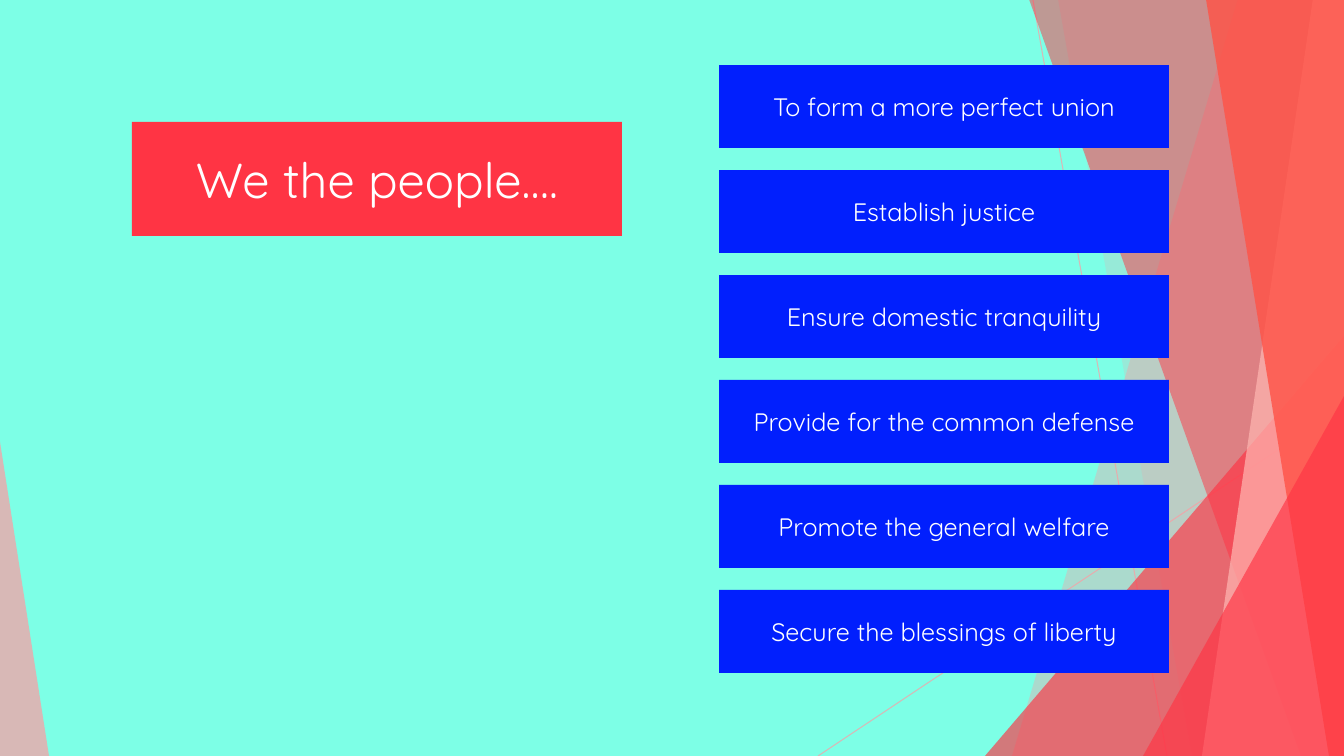
from dataclasses import dataclass

from pptx import Presentation
from pptx.dml.color import RGBColor
from pptx.enum.shapes import MSO_CONNECTOR, MSO_SHAPE
from pptx.enum.text import MSO_ANCHOR, PP_ALIGN
from pptx.oxml.ns import qn
from pptx.util import Pt
from lxml.etree import SubElement

W, H = 1344, 756
PX = 12192000 / W


@dataclass(frozen=True)
class Theme:
    mint: str = "7DFFE6"
    pink: str = "FF9AA2"
    peach: str = "FFB7B2"
    coral: str = "FF5246"
    red: str = "FF3444"
    blue: str = "011FFD"
    white: str = "FFFFFF"
    font: str = "Quicksand"
    title_size: int = 35
    goal_size: int = 18
    hairline: float = 0.75


theme = Theme()


def px(*lengths):
    return [round(n * PX) for n in lengths]


def paint(sp, fill, color, alpha=100):
    """Make the fill of a shape or of its line solid, with an opacity in percent."""
    fill.solid()
    fill.fore_color.rgb = RGBColor.from_string(color)
    if alpha < 100:
        clr = next(sp._element.spPr.iter(qn("a:srgbClr")))
        SubElement(clr, qn("a:alpha")).set("val", str(alpha * 1000))


prs = Presentation()
prs.slide_width, prs.slide_height = px(W, H)
s = prs.slides.add_slide(prs.slide_layouts[6])
bg = s.background.fill
bg.solid()
bg.fore_color.rgb = RGBColor.from_string(theme.mint)

# Thin diagonal lines
for ends in [(1033, 0, 1167, H), (W, 406, 818, H)]:
    line = s.shapes.add_connector(MSO_CONNECTOR.STRAIGHT, *px(*ends))
    line.line.width = Pt(theme.hairline)
    paint(line, line.line.fill, theme.pink, 70)
    SubElement(line._element.spPr, qn("a:effectLst"))

# Facets from back to front: a band is (top x, bottom x) and reaches the right
# edge; a triangle is (left, top, width, height, apex)
facets = [
    ((1238, 1012), theme.pink, 36),
    ((1058, 1192), theme.pink, 20),
    ((985, 336, 359, 420, 1), theme.red, 66),
    ((1029, 1301), theme.red, 50),
    ((1313, 1202), theme.peach, 70),
    ((1206, 1329), theme.coral, 80),
    ((1143, 396, 201, 360, 1), theme.red, 66),
    ((0, 442, 49, 314, 0), theme.pink, 70),
]
for geometry, color, alpha in facets:
    if len(geometry) == 2:
        top_x, bottom_x = geometry
        band = s.shapes.build_freeform(top_x, -1, scale=PX)
        band.add_line_segments([(W, -1), (W, H), (bottom_x, H)])
        sp = band.convert_to_shape()
    else:
        *box, apex = geometry
        sp = s.shapes.add_shape(MSO_SHAPE.ISOSCELES_TRIANGLE, *px(*box))
        sp.adjustments[0] = apex
    paint(sp, sp.fill, color, alpha)
    sp.line.fill.background()
    sp.shadow.inherit = False

# Title card and the column of goals
goals = [
    "To form a more perfect union",
    "Establish justice",
    "Ensure domestic tranquility",
    "Provide for the common defense",
    "Promote the general welfare",
    "Secure the blessings of liberty",
]
cards = [("We the people….", (132, 122, 490, 114), theme.red, theme.title_size)]
cards += [(goal, (719, 65 + 105 * i, 450, 83), theme.blue, theme.goal_size)
          for i, goal in enumerate(goals)]
for text, box, color, size in cards:
    sp = s.shapes.add_shape(MSO_SHAPE.RECTANGLE, *px(*box))
    paint(sp, sp.fill, color)
    sp.line.fill.background()
    sp.shadow.inherit = False
    tf = sp.text_frame
    tf.text = text
    tf.word_wrap = True
    tf.vertical_anchor = MSO_ANCHOR.MIDDLE
    p = tf.paragraphs[0]
    p.alignment = PP_ALIGN.CENTER
    r = p.runs[0]
    r.font.name = theme.font
    r.font.size = Pt(size)
    r.font.color.rgb = RGBColor.from_string(theme.white)

prs.save("out.pptx")
